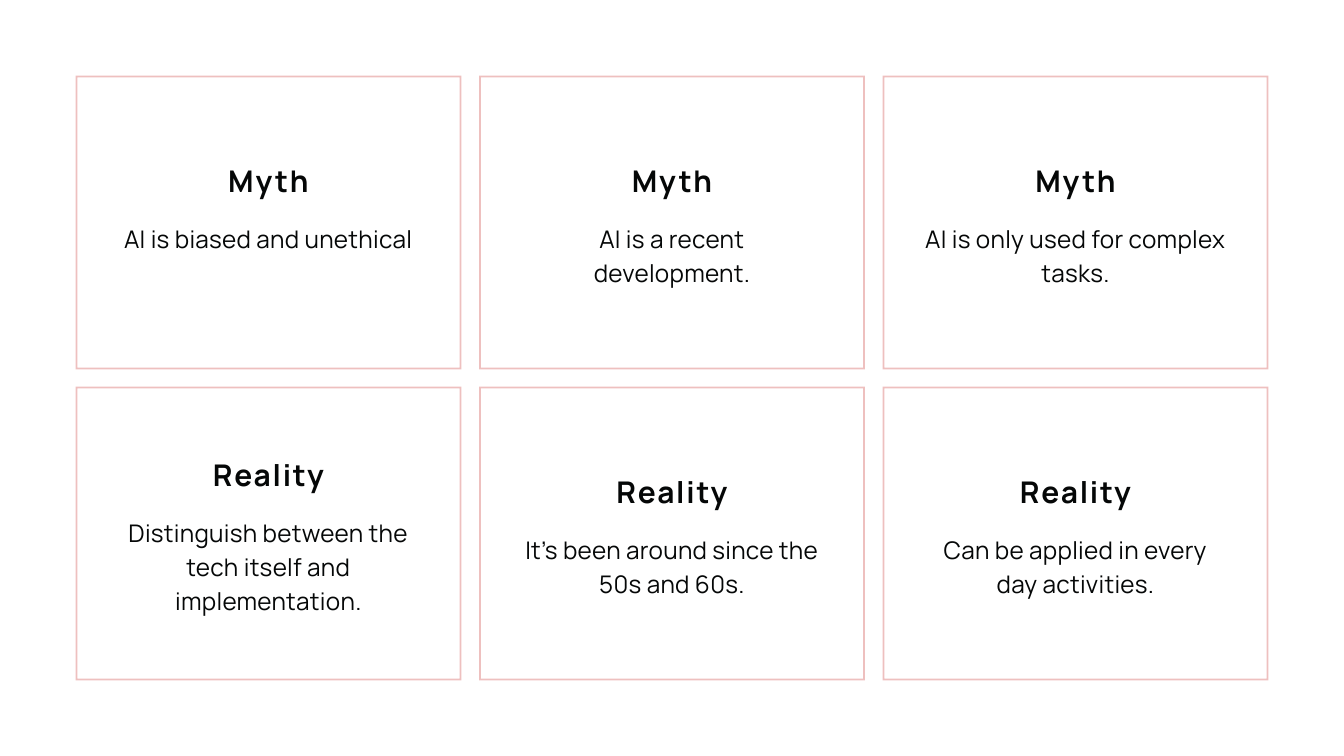
from dataclasses import dataclass
from itertools import product

from pptx import Presentation
from pptx.dml.color import RGBColor
from pptx.enum.text import MSO_AUTO_SIZE, PP_ALIGN
from pptx.slide import Slide
from pptx.util import Emu, Pt

PX = 4572
PAGE_WIDTH, PAGE_HEIGHT = 4000, 2250
MARGIN = 225
CARD_WIDTH, CARD_HEIGHT = 1148, 874
COLUMN_STEP, ROW_STEP = 1201, 926
BORDER = 5
TEXT_INSET = 119
HEADING_HEIGHT = 116
BODY_OFFSET = 186
BODY_LINE = 100

COLORS = {"page": "FFFFFF", "border": "EEC0BF", "text": "050707"}


@dataclass(frozen=True)
class TextStyle:
    font: dict
    leading: float
    tracking: int


@dataclass(frozen=True)
class Card:
    heading: str
    body: str
    lines: int = 2


HEADING = TextStyle({"name": "Manrope", "size": Pt(32), "bold": True}, 44.8, 190)
BODY = TextStyle({"name": "Manrope", "size": Pt(26), "bold": False}, 36.4, 30)

CARDS = [
    Card("Myth", "AI is biased and unethical"),
    Card("Myth", "AI is a recent development."),
    Card("Myth", "AI is only used for complex tasks."),
    Card("Reality", "Distinguish between the tech itself and implementation.", 3),
    Card("Reality", "It’s been around since the 50s and 60s."),
    Card("Reality", "Can be applied in every day activities."),
]


def px(length: int) -> Emu:
    return Emu(length * PX)


def add_frame(page: Slide, left: int, top: int) -> None:
    right, bottom = left + CARD_WIDTH, top + CARD_HEIGHT
    builder = page.shapes.build_freeform(left, top, scale=PX)
    builder.add_line_segments([(left, bottom), (right, bottom), (right, top)])
    near_x, near_y = left + BORDER, top + BORDER
    far_x, far_y = right - BORDER, bottom - BORDER
    builder.move_to(far_x, far_y)
    builder.add_line_segments([(near_x, far_y), (near_x, near_y), (far_x, near_y)])
    frame = builder.convert_to_shape()
    frame.shadow.inherit = False
    frame.fill.solid()
    frame.fill.fore_color.rgb = RGBColor.from_string(COLORS["border"])
    frame.line.fill.background()


def add_text(page: Slide, text: str, left: int, top: int, height: int,
             style: TextStyle) -> None:
    width = CARD_WIDTH - 2 * TEXT_INSET
    box = page.shapes.add_textbox(px(left), px(top), px(width), px(height))
    frame_format = {
        "margin_left": 0, "margin_top": 0, "margin_right": 0, "margin_bottom": 0,
        "word_wrap": True, "auto_size": MSO_AUTO_SIZE.SHAPE_TO_FIT_TEXT,
    }
    for name, value in frame_format.items():
        setattr(box.text_frame, name, value)
    para = box.text_frame.paragraphs[0]
    para.alignment = PP_ALIGN.CENTER
    para.line_spacing = Pt(style.leading)
    span = para.add_run()
    span.text = text
    for name, value in style.font.items():
        setattr(span.font, name, value)
    span.font.color.rgb = RGBColor.from_string(COLORS["text"])
    span._r.get_or_add_rPr().set("spc", str(style.tracking))


def add_card_text(page: Slide, card: Card, left: int, top: int) -> None:
    body_height = BODY_LINE * card.lines
    text_left = left + TEXT_INSET
    text_top = top + (CARD_HEIGHT - BODY_OFFSET - body_height) // 2 - 3
    add_text(page, card.heading, text_left, text_top, HEADING_HEIGHT, HEADING)
    add_text(page, card.body, text_left, text_top + BODY_OFFSET, body_height - 6, BODY)


def main() -> None:
    deck = Presentation()
    deck.slide_width, deck.slide_height = px(PAGE_WIDTH), px(PAGE_HEIGHT)
    page = deck.slides.add_slide(deck.slide_layouts[6])
    page.background.fill.solid()
    page.background.fill.fore_color.rgb = RGBColor.from_string(COLORS["page"])
    corners = [(MARGIN + column * COLUMN_STEP, MARGIN + row * ROW_STEP)
               for row, column in product(range(2), range(3))]
    for left, top in corners:
        add_frame(page, left, top)
    for card, (left, top) in zip(CARDS, corners):
        add_card_text(page, card, left, top)
    deck.save("out.pptx")


if __name__ == "__main__":
    main()
